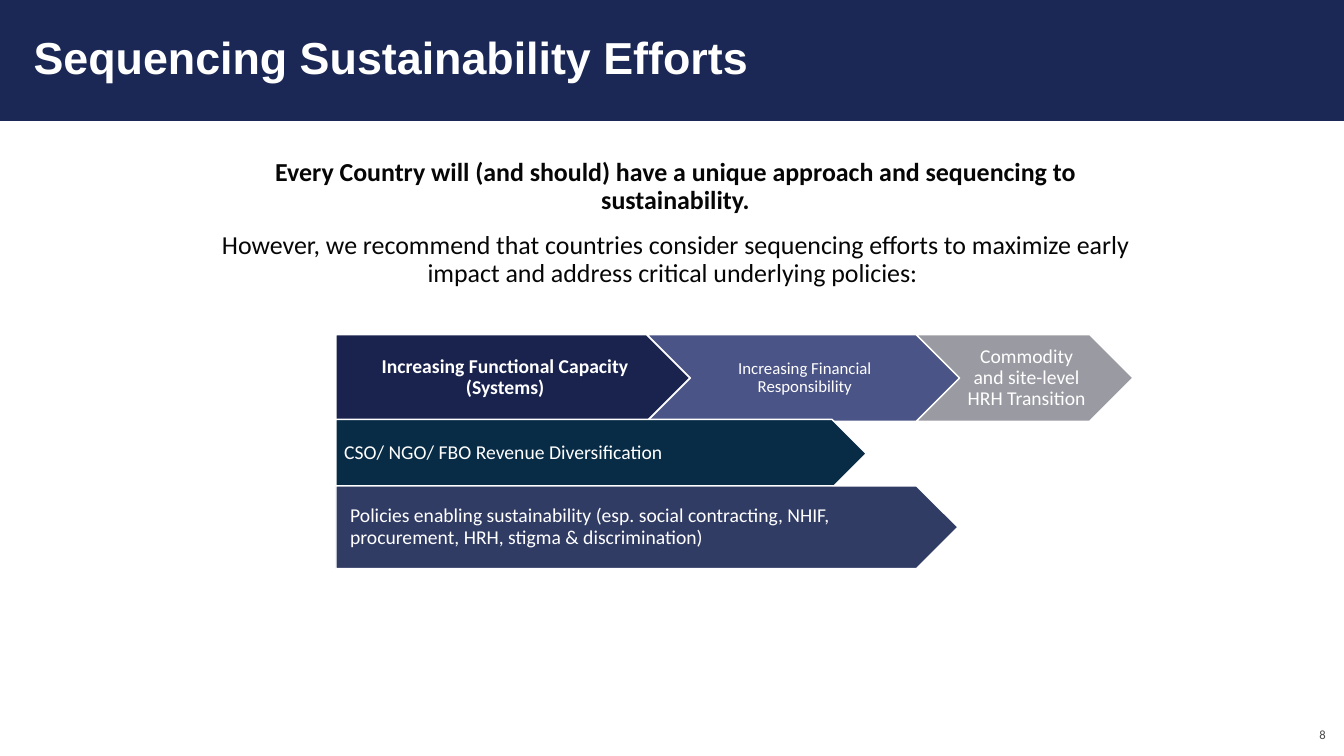
"""Build the slide on sequencing sustainability efforts."""
from lxml import etree
from pptx import Presentation
from pptx.dml.color import RGBColor
from pptx.enum.shapes import MSO_SHAPE
from pptx.enum.text import MSO_ANCHOR, PP_ALIGN
from pptx.oxml.ns import qn
from pptx.util import Inches, Pt

RECTANGLE = MSO_SHAPE.RECTANGLE
PENTAGON = MSO_SHAPE.PENTAGON
CHEVRON = MSO_SHAPE.CHEVRON
TOP, MIDDLE = MSO_ANCHOR.TOP, MSO_ANCHOR.MIDDLE
LEFT, CENTER, RIGHT = PP_ALIGN.LEFT, PP_ALIGN.CENTER, PP_ALIGN.RIGHT

WIDTH, HEIGHT = Inches(13.33), Inches(7.5)
COLUMN, ROW = WIDTH / 40, HEIGHT / 30
NAVY, WHITE = "1B2755", "FFFFFF"
PHASE_ROW, PHASE_HEIGHT = 13.28, 3.44


def color(value):
    """Turn a hex string into a colour."""
    return RGBColor.from_string(value)


def grid(left, top, width, height):
    """Convert columns and rows into slide lengths."""
    return [round(length) for length in
            (left * COLUMN, top * ROW, width * COLUMN, height * ROW)]


def add_block(slide, kind, box, fill, outlined=True, alpha=None):
    """Add a filled shape, optionally outlined in white or translucent."""
    shape = slide.shapes.add_shape(kind, *box)
    shape.shadow.inherit = False
    shape.fill.solid()
    shape.fill.fore_color.rgb = color(fill)
    if outlined:
        shape.line.color.rgb = color(WHITE)
        shape.line.width = Pt(1)
    else:
        shape.line.fill.background()
    if alpha:
        paint = shape.fill._xPr.find(qn("a:solidFill"))[0]
        etree.SubElement(paint, qn("a:alpha")).set("val", str(alpha * 1000))


def add_text(slide, box, paragraphs, size, ink, align=LEFT, anchor=MIDDLE,
             margins=(0, 0, 0, 0), font="Calibri", gap=0):
    """Add a wrapped text box from (text, bold) paragraphs."""
    frame = slide.shapes.add_textbox(*box).text_frame
    frame.word_wrap = True
    frame.vertical_anchor = anchor
    (frame.margin_left, frame.margin_top,
     frame.margin_right, frame.margin_bottom) = map(Inches, margins)
    for index, (text, bold) in enumerate(paragraphs):
        paragraph = frame.add_paragraph() if index else frame.paragraphs[0]
        paragraph.alignment = align
        paragraph.line_spacing = 0.9
        paragraph.space_before = Pt(gap if index else 0)
        run = paragraph.add_run()
        run.text = text
        run.font.name = font
        run.font.size = Pt(size)
        run.font.bold = bold
        run.font.color.rgb = color(ink)


def add_arrow(slide, kind, box, fill, text, size=14, bold=False,
              align=LEFT, margins=(0.08, 0.04, 0.02, 0.04), alpha=None):
    """Add an arrow block with its label kept clear of the points."""
    add_block(slide, kind, box, fill, alpha=alpha)
    left, top, width, height = box
    tip = height // 2
    if kind == CHEVRON:
        label = (left + tip, top, width - 2 * tip, height)
    else:
        label = (left, top, width - tip // 2, height)
    add_text(slide, label, [(text, bold)], size, WHITE, align, margins=margins)


def add_phases(slide):
    """Add the row of three successive phases."""
    phases = [
        (PENTAGON, 10, 10.53, "19234D",
         "Increasing Functional Capacity (Systems)", 14, True, 0.08),
        (CHEVRON, 19.26, 9.3, "4B5486",
         "Increasing Financial Responsibility", 12, False, 0.05),
        (CHEVRON, 27.27, 6.45, "999AA2",
         "Commodity and site-level HRH Transition", 14, False, 0.06),
    ]
    for kind, left, width, fill, text, size, bold, inset in phases:
        add_arrow(slide, kind, grid(left, PHASE_ROW, width, PHASE_HEIGHT), fill,
                  text, size, bold, CENTER, (inset, 0.04, 0.02, 0.04))


def main():
    """Create and save the slide."""
    presentation = Presentation()
    presentation.slide_width, presentation.slide_height = WIDTH, HEIGHT
    slide = presentation.slides.add_slide(presentation.slide_layouts[6])
    add_block(slide, RECTANGLE, grid(0, 0, 40, 4.8), NAVY, outlined=False)
    add_text(slide, grid(37.83, 28.4, 1.92, 1.6), [("8", False)], 9, "494949",
             RIGHT, margins=(0.1, 0.05, 0.1, 0.05))
    add_text(slide, grid(1, 0.68, 38.34, 3.4),
             [("Sequencing Sustainability Efforts", True)], 32, WHITE, font="Arial")
    add_text(slide, grid(5.7, 6.12, 28.8, 5.72), [
        ("Every Country will (and should) have a unique approach and "
         "sequencing to sustainability.", True),
        ("However, we recommend that countries consider sequencing efforts to "
         "maximize early impact and address critical underlying policies: ", False),
    ], 18.5, "060606", CENTER, TOP, (0.1, 0.05, 0.1, 0.05), gap=12)
    add_phases(slide)
    add_arrow(slide, PENTAGON, grid(10, 16.64, 15.78, 2.72), "092C46",
              "CSO/ NGO/ FBO Revenue Diversification")
    add_arrow(slide, PENTAGON, grid(10, 19.28, 18.51, 3.28), NAVY,
              "Policies enabling sustainability (esp. social contracting, NHIF, "
              "procurement, HRH, stigma & discrimination)",
              margins=(0.14, 0.07, 0.12, 0.07), alpha=90)
    presentation.save("out.pptx")


if __name__ == "__main__":
    main()
